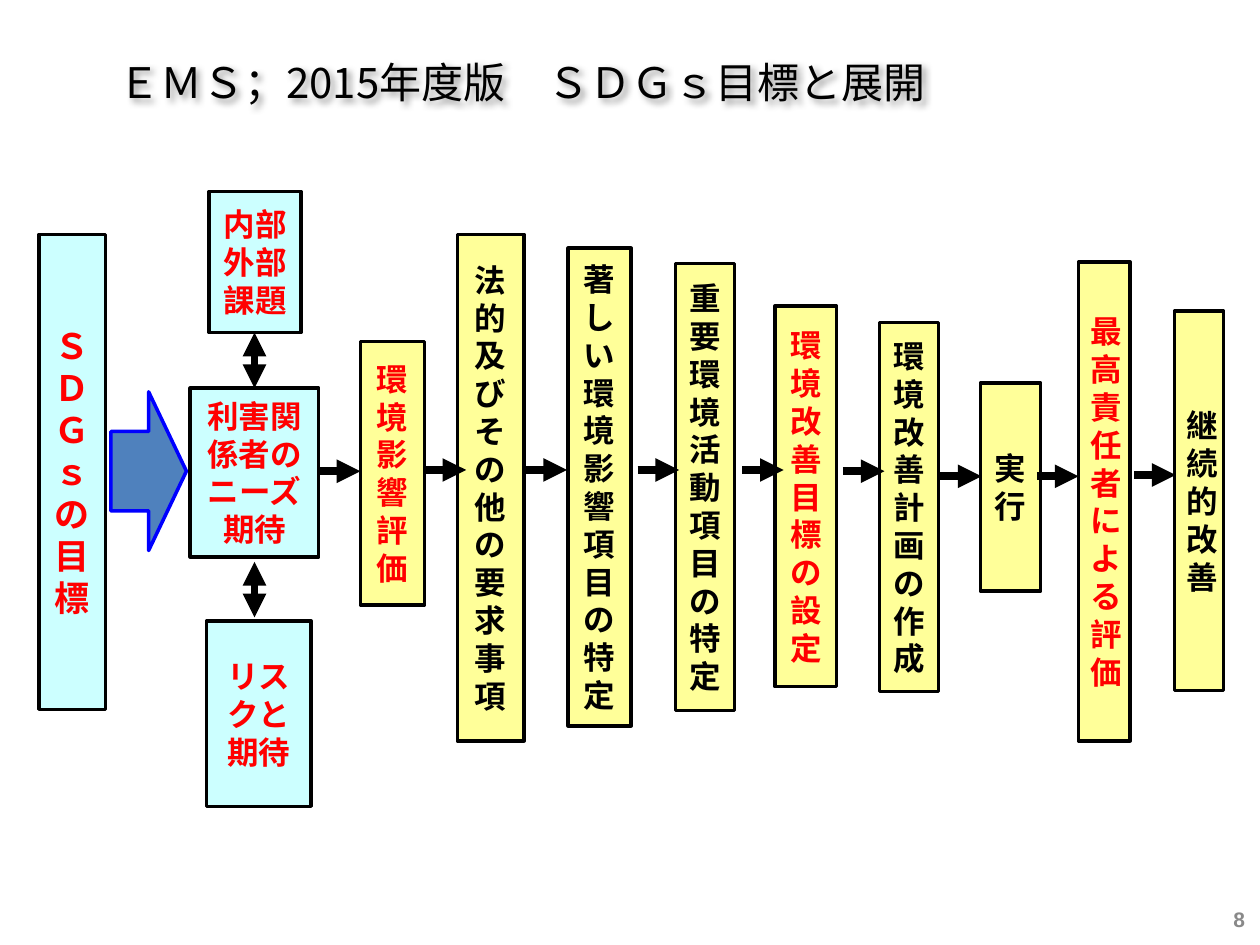
from dataclasses import dataclass

from lxml import etree
from pptx import Presentation
from pptx.dml.color import RGBColor
from pptx.enum.shapes import MSO_CONNECTOR, MSO_SHAPE
from pptx.enum.text import MSO_ANCHOR, PP_ALIGN
from pptx.oxml import parse_xml
from pptx.oxml.ns import nsdecls, qn
from pptx.util import Inches, Pt

RECT, RIGHT_ARROW = MSO_SHAPE.RECTANGLE, MSO_SHAPE.RIGHT_ARROW
STRAIGHT = MSO_CONNECTOR.STRAIGHT
LEFT, CENTER, RIGHT = PP_ALIGN.LEFT, PP_ALIGN.CENTER, PP_ALIGN.RIGHT
MIDDLE = MSO_ANCHOR.MIDDLE


@dataclass(frozen=True)
class Theme:
    black: str = "000000"
    red: str = "FF0000"
    grey: str = "898989"
    input_fill: str = "CCFFFF"
    step_fill: str = "FFFF99"
    arrow_fill: str = "4F81BD"
    arrow_line: str = "0000FF"
    title_font: str = "Noto Sans CJK JP"
    body_font: str = "Calibri"
    number_font: str = "Arial"
    title_size: int = 24
    goal_size: int = 20
    body_size: int = 18
    number_size: int = 12
    outline: float = 2
    arrow_width: float = 4.5


THEME = Theme()

# Process steps: text, colour, box (left, top, width, height)
STEPS = [
    ("環境影響評価", THEME.red, (2.86, 2.71, 0.51, 2.09)),
    ("法的及びその他の要求事項", THEME.black, (3.63, 1.86, 0.53, 4.02)),
    ("著しい環境影響項目の特定", THEME.black, (4.51, 1.97, 0.5, 3.79)),
    ("重要環境活動項目の特定", THEME.black, (5.36, 2.09, 0.47, 3.55)),
    ("環境改善目標の設定", THEME.red, (6.15, 2.43, 0.49, 3.02)),
    ("環境改善計画の作成", THEME.black, (6.98, 2.56, 0.47, 2.93)),
    ("実行", THEME.black, (7.78, 3.04, 0.48, 1.65)),
    ("最高責任者による評価", THEME.red, (8.56, 2.08, 0.41, 3.8)),
    ("継続的改善", THEME.black, (9.32, 2.47, 0.39, 3.01)),
]

# Start point of the arrow that leads into each step
STEP_ARROWS = [(2.53, 3.74), (3.37, 3.73), (4.17, 3.73), (5.06, 3.73), (5.89, 3.73),
               (6.69, 3.74), (7.46, 3.78), (8.23, 3.78), (9.0, 3.77)]
STEP_ARROW_LENGTH = 0.33

# Inputs that feed the process
INPUTS = [
    ("内部外部\n課題", (1.66, 1.52, 0.73, 1.12)),
    ("利害関係者の\nニーズ\n期待", (1.51, 3.08, 1.02, 1.34)),
    ("リスクと\n期待", (1.64, 4.93, 0.83, 1.47)),
]
INPUT_ARROW_X = 2.02
INPUT_ARROW_TOPS = (2.64, 4.46)
INPUT_ARROW_LENGTH = 0.44


def write_text(shape, text, size=THEME.body_size, color=THEME.black,
               font=THEME.body_font, bold=True, align=CENTER):
    frame = shape.text_frame
    frame.word_wrap = True
    frame.vertical_anchor = MIDDLE
    frame.text = text
    for paragraph in frame.paragraphs:
        paragraph.alignment = align
        for run in paragraph.runs:
            run.font.size = Pt(size)
            run.font.bold = bold
            run.font.name = font
            run.font.color.rgb = RGBColor.from_string(color)
            east_asian = etree.SubElement(run.font._element, qn("a:ea"))
            east_asian.set("typeface", font)


def add_block(slide, box, fill, line=THEME.black, kind=RECT):
    block = slide.shapes.add_shape(kind, *map(Inches, box))
    block.shadow.inherit = False
    block.fill.solid()
    block.fill.fore_color.rgb = RGBColor.from_string(fill)
    block.line.color.rgb = RGBColor.from_string(line)
    block.line.width = Pt(THEME.outline)
    return block


def add_arrow(slide, start, end, both_ends=False):
    arrow = slide.shapes.add_connector(STRAIGHT, *map(Inches, (*start, *end)))
    arrow.line.color.rgb = RGBColor.from_string(THEME.black)
    arrow.line.width = Pt(THEME.arrow_width)
    line = arrow.line._get_or_add_ln()
    for tag in ("a:headEnd", "a:tailEnd") if both_ends else ("a:tailEnd",):
        etree.SubElement(line, qn(tag)).set("type", "triangle")
    etree.SubElement(arrow._element.spPr, qn("a:effectLst"))


def add_title(slide, box):
    title = slide.shapes.add_textbox(*map(Inches, box))
    write_text(title, "ＥＭＳ；2015年度版　ＳＤＧｓ目標と展開", size=THEME.title_size,
               font=THEME.title_font, bold=False, align=LEFT)
    # Soft shadow below the letters
    title._element.spPr.append(parse_xml(
        f'<a:effectLst {nsdecls("a")}>'
        '<a:outerShdw blurRad="50800" dist="38100" dir="2700000" algn="tl" rotWithShape="0">'
        '<a:srgbClr val="000000"><a:alpha val="40000"/></a:srgbClr>'
        '</a:outerShdw></a:effectLst>'))


def add_goal(slide, goal_box, arrow_box):
    goal = add_block(slide, goal_box, THEME.input_fill)
    write_text(goal, "ＳＤＧｓの目標", size=THEME.goal_size, color=THEME.red)
    add_block(slide, arrow_box, THEME.arrow_fill, THEME.arrow_line, RIGHT_ARROW)


def add_inputs(slide):
    for text, box in INPUTS:
        write_text(add_block(slide, box, THEME.input_fill), text, color=THEME.red)
    for top in INPUT_ARROW_TOPS:
        add_arrow(slide, (INPUT_ARROW_X, top),
                  (INPUT_ARROW_X, top + INPUT_ARROW_LENGTH), both_ends=True)


def add_steps(slide):
    for text, color, box in STEPS:
        write_text(add_block(slide, box, THEME.step_fill), text, color=color)
    for x, y in STEP_ARROWS:
        add_arrow(slide, (x, y), (x + STEP_ARROW_LENGTH, y))


def add_slide_number(slide, box):
    number = slide.shapes.add_textbox(*map(Inches, box))
    write_text(number, "8", size=THEME.number_size, color=THEME.grey,
               font=THEME.number_font, align=RIGHT)


def main():
    deck = Presentation()
    deck.slide_width, deck.slide_height = Inches(10), Inches(7.5)
    slide = deck.slides.add_slide(deck.slide_layouts[6])
    add_slide_number(slide, (9.53, 7.09, 0.45, 0.41))
    add_goal(slide, (0.31, 1.86, 0.53, 3.77), (0.88, 3.11, 0.6, 1.26))
    add_inputs(slide)
    add_steps(slide)
    add_title(slide, (0.84, 0.36, 8.82, 0.57))
    deck.save("out.pptx")


if __name__ == "__main__":
    main()
